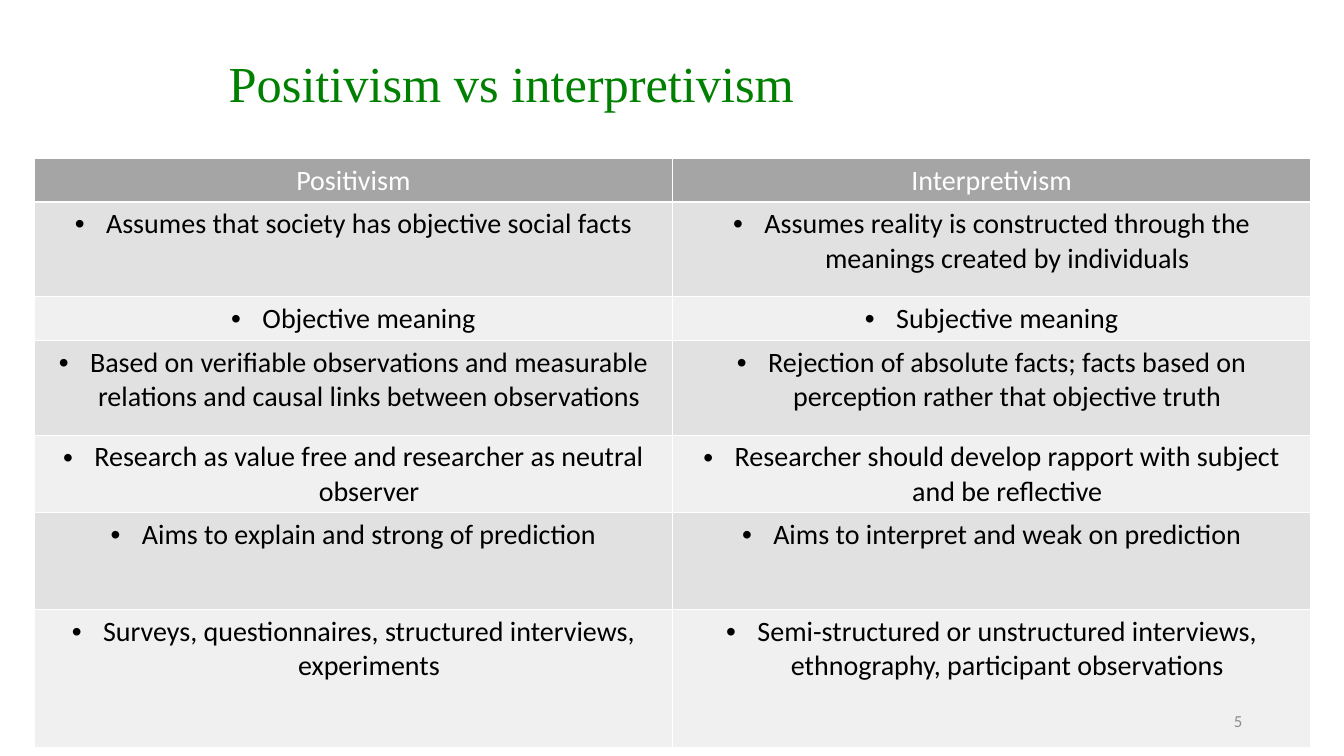
from lxml import etree
from pptx import Presentation
from pptx.dml.color import RGBColor
from pptx.enum import text
from pptx.oxml import ns
from pptx.util import Inches, Pt

COLORS = {
    "title": "008000",
    "header": "A5A5A5",
    "odd_row": "E1E1E1",
    "even_row": "F0F0F0",
    "white": "FFFFFF",
    "black": "000000",
    "page_number": "8C8C8C",
}

HEADINGS = ("Positivism", "Interpretivism")
COMPARISONS = [
    ("Assumes that society has objective social facts",
     "Assumes reality is constructed through the meanings created by individuals"),
    ("Objective meaning", "Subjective meaning"),
    ("Based on verifiable observations and measurable relations and causal links between observations",
     "Rejection of absolute facts; facts based on perception rather that objective truth"),
    ("Research as value free and researcher as neutral observer",
     "Researcher should develop rapport with subject and be reflective"),
    ("Aims to explain and strong of prediction",
     "Aims to interpret and weak on prediction"),
    ("Surveys, questionnaires, structured interviews, experiments",
     "Semi-structured or unstructured interviews, ethnography, participant observations"),
]
ROW_HEIGHTS = (0.41, 0.94, 0.41, 0.94, 0.72, 0.96, 1.37)


def color(name):
    return RGBColor.from_string(COLORS[name])


def write(text_frame, wording, size, font_name, color_name, alignment):
    text_frame.text = wording
    paragraph = text_frame.paragraphs[0]
    paragraph.alignment = alignment
    font = paragraph.runs[0].font
    font.size = Pt(size)
    font.name = font_name
    font.bold = False
    font.color.rgb = color(color_name)
    return paragraph


def add_text(slide, box, *style):
    shape = slide.shapes.add_textbox(*map(Inches, box))
    text_frame = shape.text_frame
    text_frame.word_wrap = True
    text_frame.vertical_anchor = text.MSO_ANCHOR.MIDDLE
    return write(text_frame, *style)


def add_bullet(paragraph):
    properties = paragraph._p.get_or_add_pPr()
    properties.set("marL", str(Inches(0.31)))
    properties.set("indent", str(Inches(-0.31)))
    etree.SubElement(properties, ns.qn("a:buFont"), typeface="Arial")
    etree.SubElement(properties, ns.qn("a:buChar"), char="•")


def add_borders(cell):
    properties = cell._tc.get_or_add_tcPr()
    for side in ("lnL", "lnR", "lnT", "lnB"):
        line = etree.SubElement(properties, ns.qn(f"a:{side}"), w=str(Pt(1)))
        fill = etree.SubElement(line, ns.qn("a:solidFill"))
        etree.SubElement(fill, ns.qn("a:srgbClr"), val=COLORS["white"])


def add_comparison_table(slide, box):
    rows = [HEADINGS, *COMPARISONS]
    frame = slide.shapes.add_table(len(rows), len(HEADINGS), *map(Inches, box))
    table = frame.table
    table.first_row = table.horz_banding = False
    for row, height in zip(table.rows, ROW_HEIGHTS):
        row.height = Inches(height)
    for row_index, wordings in enumerate(rows):
        is_header = row_index == 0
        fill_name = "header" if is_header else "odd_row" if row_index % 2 else "even_row"
        for column_index, wording in enumerate(wordings):
            cell = table.cell(row_index, column_index)
            add_borders(cell)
            cell.fill.solid()
            cell.fill.fore_color.rgb = color(fill_name)
            paragraph = write(cell.text_frame, wording, 20, "Calibri",
                              "white" if is_header else "black", text.PP_ALIGN.CENTER)
            if not is_header:
                add_bullet(paragraph)


def main():
    presentation = Presentation()
    presentation.slide_width = Inches(13.33)
    presentation.slide_height = Inches(7.5)
    slide = presentation.slides.add_slide(presentation.slide_layouts[6])
    title = add_text(slide, (2.17, 0.23, 9, 1.25), "Positivism vs interpretivism",
                     36, "Times New Roman", "title", text.PP_ALIGN.LEFT)
    title.line_spacing = 0.9
    add_comparison_table(slide, (0.34, 1.57, 12.66, sum(ROW_HEIGHTS)))
    add_text(slide, (9.42, 6.95, 3, 0.4), "5",
             12, "Calibri", "page_number", text.PP_ALIGN.RIGHT)
    presentation.save("out.pptx")


if __name__ == "__main__":
    main()
